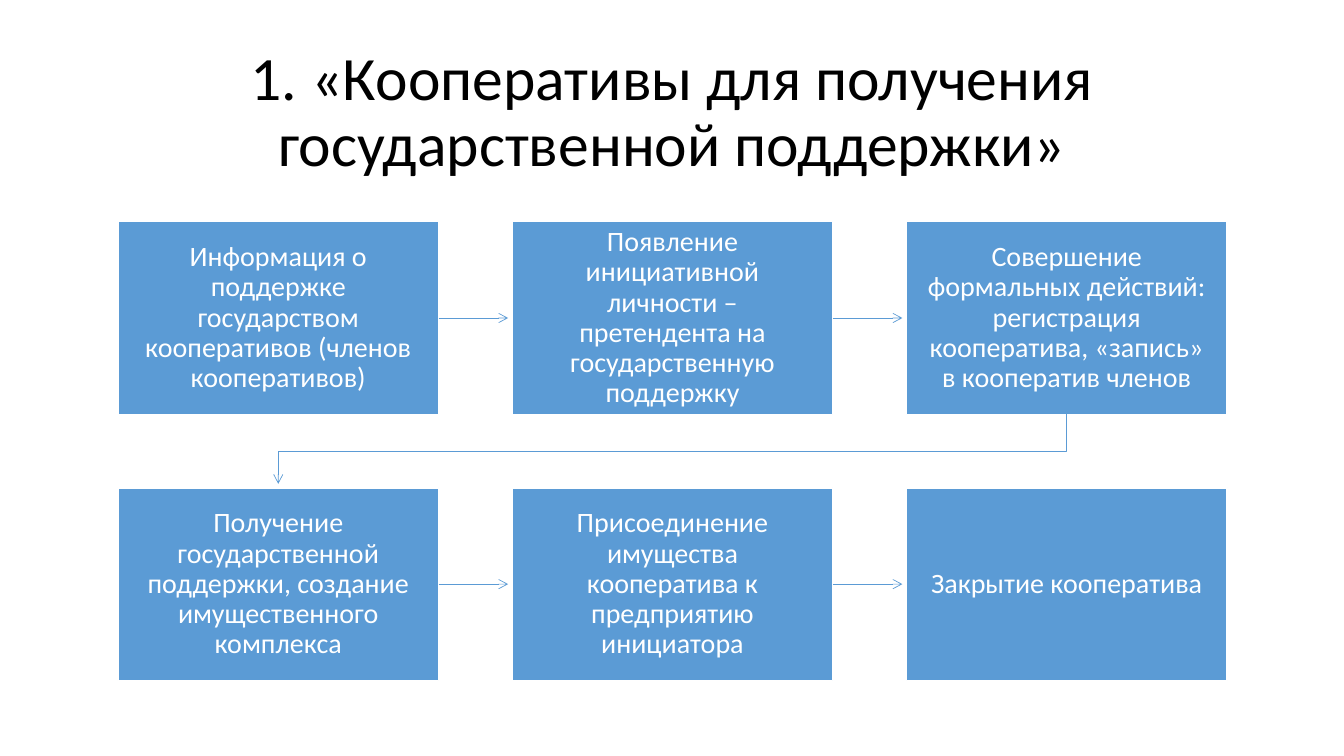
from lxml.etree import SubElement
from pptx import Presentation
from pptx.dml.color import RGBColor
from pptx.enum.shapes import MSO_CONNECTOR, MSO_SHAPE
from pptx.enum.text import MSO_ANCHOR, PP_ALIGN
from pptx.oxml.ns import qn
from pptx.util import Inches, Pt

COLORS = {"blue": "5B9BD5", "white": "FFFFFF", "black": "000000"}
FONT = "Calibri"
STEPS = [
    "Информация о поддержке государством кооперативов (членов кооперативов)",
    "Появление инициативной личности – претендента на государственную поддержку",
    "Совершение формальных действий: регистрация кооператива, «запись» в кооператив членов",
    "Получение государственной поддержки, создание имущественного комплекса",
    "Присоединение имущества кооператива к предприятию инициатора",
    "Закрытие кооператива",
]
COLUMNS = 3
LEFT, TOP = 1.17, 2.2
BOX_WIDTH, BOX_HEIGHT = 3.18, 1.91
COLUMN_STEP, ROW_STEP = 3.91, 2.64
ARROW_GAP = 0.04


def write(frame, text, size, color):
    frame.word_wrap = True
    frame.vertical_anchor = MSO_ANCHOR.MIDDLE
    para = frame.paragraphs[0]
    para.text = text
    para.alignment = PP_ALIGN.CENTER
    para.line_spacing = 0.9
    para.font.name = FONT
    para.font.size = Pt(size)
    para.font.color.rgb = RGBColor.from_string(COLORS[color])


def style_arrow(arrow):
    arrow.line.color.rgb = RGBColor.from_string(COLORS["blue"])
    arrow.line.width = Pt(0.5)
    properties = arrow.line._get_or_add_ln()
    SubElement(properties, qn("a:tailEnd"), type="arrow")
    SubElement(properties.getparent(), qn("a:effectLst"))


deck = Presentation()
deck.slide_width, deck.slide_height = Inches(13.33), Inches(7.5)
page = deck.slides.add_slide(deck.slide_layouts[5])

# Title
title = page.shapes.title
title.left, title.top = Inches(0.92), Inches(0.4)
title.width, title.height = Inches(11.5), Inches(1.45)
write(title.text_frame, "1. «Кооперативы для получения государственной поддержки»", 44, "black")

# Step boxes
boxes = []
for index, step in enumerate(STEPS):
    row, column = divmod(index, COLUMNS)
    box = page.shapes.add_shape(
        MSO_SHAPE.RECTANGLE,
        Inches(LEFT + column * COLUMN_STEP), Inches(TOP + row * ROW_STEP),
        Inches(BOX_WIDTH), Inches(BOX_HEIGHT))
    box.shadow.inherit = False
    box.fill.solid()
    box.fill.fore_color.rgb = RGBColor.from_string(COLORS["blue"])
    box.line.color.rgb = RGBColor.from_string(COLORS["white"])
    box.line.width = Pt(1)
    frame = box.text_frame
    frame.margin_left = frame.margin_right = Inches(0.16)
    frame.margin_top = frame.margin_bottom = Inches(0.16)
    write(frame, step, 20, "white")
    boxes.append(box)

# Arrows within each row
for index, box in enumerate(boxes):
    if index % COLUMNS == COLUMNS - 1:
        continue
    middle = box.top + box.height // 2
    arrow = page.shapes.add_connector(
        MSO_CONNECTOR.STRAIGHT, box.left + box.width, middle,
        boxes[index + 1].left - Inches(ARROW_GAP), middle)
    arrow.begin_connect(box, 3)
    style_arrow(arrow)

# Bent arrow from the first row to the second
last, first = boxes[COLUMNS - 1], boxes[COLUMNS]
start_x = last.left + last.width // 2
end_x = first.left + first.width // 2
start_y = last.top + last.height
bend_y = (start_y + first.top) // 2
outline = page.shapes.build_freeform(start_x, start_y)
outline.add_line_segments(
    [(start_x, bend_y), (end_x, bend_y), (end_x, first.top - Inches(ARROW_GAP))],
    close=False)
bent_arrow = outline.convert_to_shape()
bent_arrow.fill.background()
style_arrow(bent_arrow)

deck.save("out.pptx")
